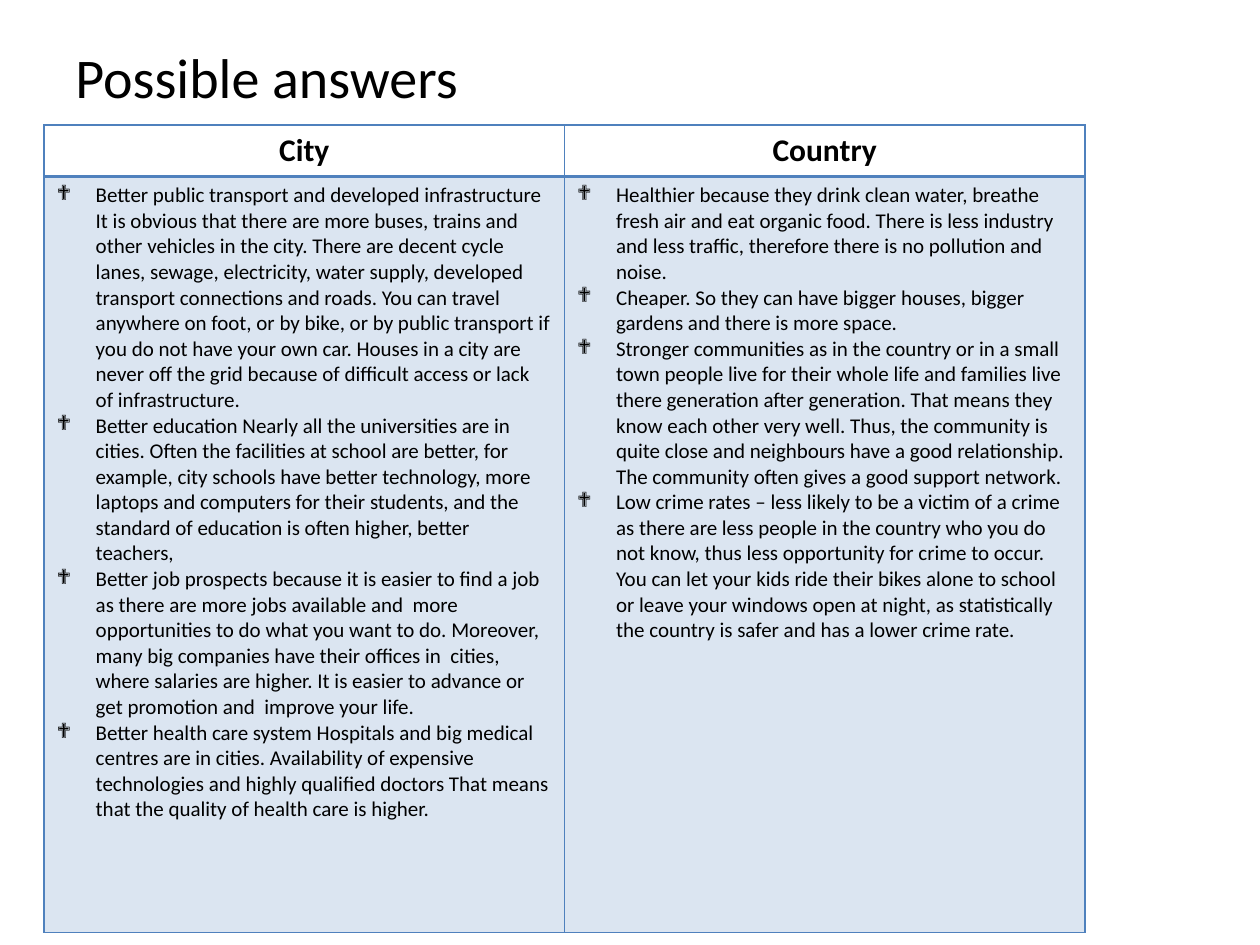
from lxml import etree
from pptx import Presentation, util as u
from pptx.dml.color import RGBColor
from pptx.enum import text
from pptx.oxml.ns import qn

# Content
HEADING = "Possible answers"
ANSWERS = {
    "City": [
        "Better public transport and developed infrastructure It is obvious that there are more buses, trains and other vehicles in the city. There are decent cycle lanes, sewage, electricity, water supply, developed transport connections and roads. You can travel anywhere on foot, or by bike, or by public transport if you do not have your own car. Houses in a city are never off the grid because of difficult access or lack of infrastructure.",
        "Better education Nearly all the universities are in cities. Often the facilities at school are better, for example, city schools have better technology, more laptops and computers for their students, and the standard of education is often higher, better teachers,",
        "Better job prospects because it is easier to find a job as there are more jobs available and  more opportunities to do what you want to do. Moreover, many big companies have their offices in  cities, where salaries are higher. It is easier to advance or get promotion and  improve your life.",
        "Better health care system Hospitals and big medical centres are in cities. Availability of expensive technologies and highly qualified doctors That means that the quality of health care is higher.",
    ],
    "Country": [
        "Healthier because they drink clean water, breathe fresh air and eat organic food. There is less industry and less traffic, therefore there is no pollution and noise.",
        "Cheaper. So they can have bigger houses, bigger gardens and there is more space.",
        "Stronger communities as in the country or in a small town people live for their whole life and families live there generation after generation. That means they know each other very well. Thus, the community is quite close and neighbours have a good relationship. The community often gives a good support network.",
        "Low crime rates – less likely to be a victim of a crime as there are less people in the country who you do not know, thus less opportunity for crime to occur.  You can let your kids ride their bikes alone to school or leave your windows open at night, as statistically the country is safer and has a lower crime rate.",
    ],
}

THEME = {
    "ink": "000000", "accent": "4F81BD", "tint": 20, "bullet": "❖",
    "heading": {"name": "Calibri", "size": u.Pt(32), "bold": False},
    "column": {"name": "Calibri", "size": u.Pt(18), "bold": True},
    "answer": {"name": "Calibri", "size": u.Pt(12), "bold": False},
}
ROW_HEIGHTS = (0.41, 6)
COLUMN_WIDTH = 4.13
INDENT = u.Inches(0.31)


def write(paragraph, words, style):
    run = paragraph.add_run()
    run.text = words
    for key, value in THEME[style].items():
        setattr(run.font, key, value)
    run.font.color.rgb = RGBColor.from_string(THEME["ink"])


def add_bullet(paragraph):
    props = paragraph._p.get_or_add_pPr()
    props.set("marL", str(INDENT))
    props.set("indent", str(-INDENT))
    etree.SubElement(props, qn("a:buFont"), typeface="Wingdings")
    etree.SubElement(props, qn("a:buChar"), char=THEME["bullet"])


def add_borders(cell, **widths):
    for side in "LRTB":
        line = etree.SubElement(cell._tc.get_or_add_tcPr(), qn(f"a:ln{side}"),
                                w=str(u.Pt(widths.get(side, 1))))
        fill = etree.SubElement(line, qn("a:solidFill"))
        etree.SubElement(fill, qn("a:srgbClr"), val=THEME["accent"])


def add_tint(cell):
    cell.fill.solid()
    cell.fill.fore_color.rgb = RGBColor.from_string(THEME["accent"])
    colour = cell._tc.tcPr.find(qn("a:solidFill"))[0]
    etree.SubElement(colour, qn("a:alpha"), val=str(THEME["tint"] * 1000))


def main():
    deck = Presentation()
    deck.slide_width, deck.slide_height = u.Inches(10), u.Inches(7.5)
    slide = deck.slides.add_slide(deck.slide_layouts[6])

    # Heading
    heading = slide.shapes.add_textbox(*map(u.Inches, (0.5, 0.29, 9, 6.41))).text_frame
    heading.word_wrap = True
    write(heading.paragraphs[0], HEADING, "heading")

    # Table of answers: one column per place
    width, height = COLUMN_WIDTH * len(ANSWERS), sum(ROW_HEIGHTS)
    table = slide.shapes.add_table(len(ROW_HEIGHTS), len(ANSWERS),
                                   *map(u.Inches, (0.35, 0.99, width, height))).table
    table.horz_banding = False
    for row, row_height in zip(table.rows, ROW_HEIGHTS):
        row.height = u.Inches(row_height)

    for index, (place, answers) in enumerate(ANSWERS.items()):
        table.columns[index].width = u.Inches(COLUMN_WIDTH)

        # Column heading
        top = table.cell(0, index)
        add_borders(top, B=2)
        top.fill.background()
        top.text_frame.paragraphs[0].alignment = text.PP_ALIGN.CENTER
        write(top.text_frame.paragraphs[0], place, "column")

        # Bulleted answers
        body = table.cell(1, index)
        add_borders(body, T=2)
        add_tint(body)
        frame = body.text_frame
        for number, answer in enumerate(answers):
            paragraph = frame.add_paragraph() if number else frame.paragraphs[0]
            add_bullet(paragraph)
            write(paragraph, answer, "answer")

    deck.save("out.pptx")


if __name__ == "__main__":
    main()
